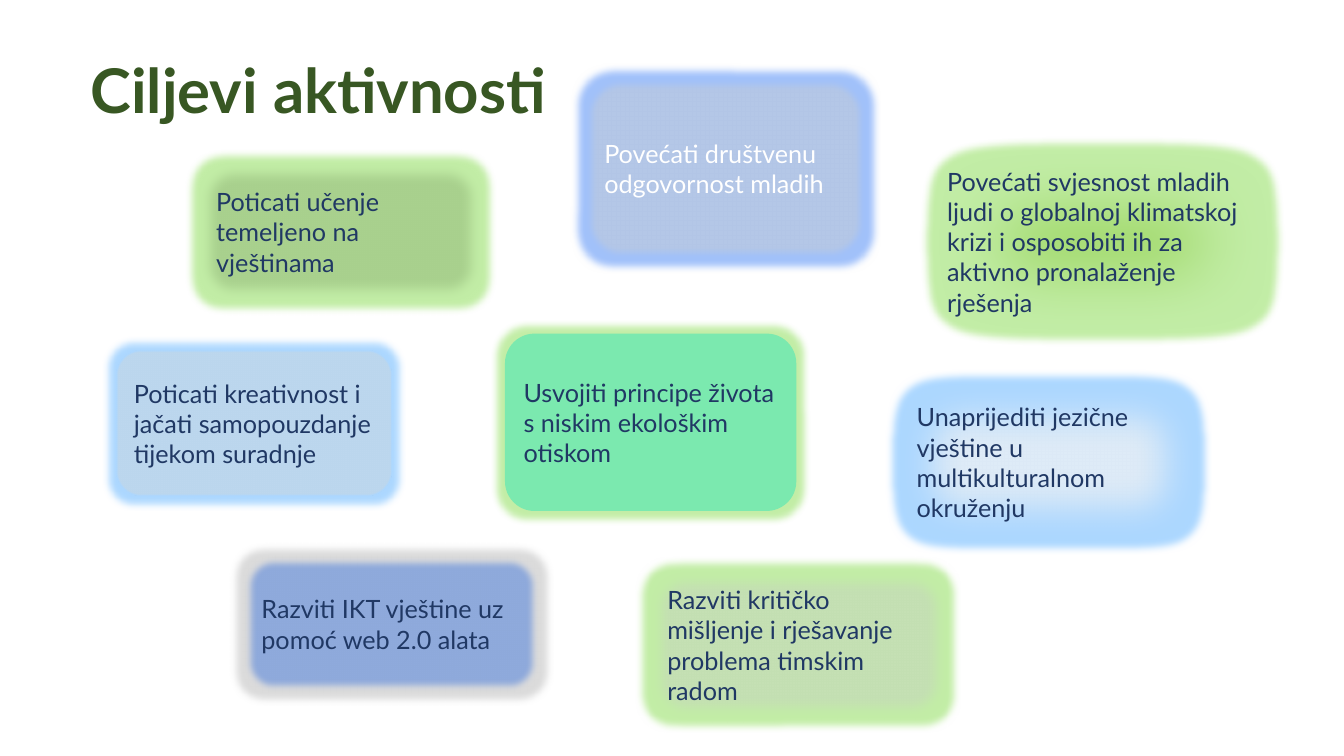
from lxml.etree import SubElement
from pptx import Presentation
from pptx.dml.color import RGBColor
from pptx.enum.shapes import MSO_SHAPE as Shape
from pptx.enum.text import MSO_ANCHOR as Anchor, MSO_AUTO_SIZE as AutoSize, PP_ALIGN as Align
from pptx.oxml.ns import qn
from pptx.util import Pt

NAVY = RGBColor(0x20, 0x38, 0x64)
WHITE = RGBColor(0xFF, 0xFF, 0xFF)
DARK_GREEN = RGBColor(0x38, 0x57, 0x23)
OUTLINE = RGBColor(0x43, 0x73, 0x9E)
MINT = RGBColor(0x7B, 0xE9, 0xAF)
PALE_GREEN = RGBColor(0xC5, 0xE0, 0xB4)
SOFT_GREEN = RGBColor(0xA9, 0xD1, 0x8E)
LIME = RGBColor(0x92, 0xD0, 0x50)
PERIWINKLE = RGBColor(0xB4, 0xC7, 0xE7)
SKY = RGBColor(0xBD, 0xD7, 0xEE)
STEEL_BLUE = RGBColor(0x8F, 0xAA, 0xDC)
ICE = RGBColor(0xDE, 0xEB, 0xF7)
GREEN_GLOW = RGBColor(0x68, 0xD3, 0x21)
SKY_GLOW = RGBColor(0x31, 0x9D, 0xFF)
BLUE_GLOW = RGBColor(0x14, 0x64, 0xF4)
GRAY_GLOW = RGBColor(0xA5, 0xA5, 0xA5)

# Text, (left, top, width, height), fill, text colour, outline, glow, soft edge radius
GOALS = [
    ("Usvojiti principe života s niskim ekološkim otiskom",
     (360.7, 238.3, 208.1, 126.7), MINT, NAVY, None, GREEN_GLOW, 0),
    ("Razviti kritičko mišljenje i rješavanje problema timskim radom",
     (464.4, 408.2, 212.4, 105.1), PALE_GREEN, NAVY, None, GREEN_GLOW, 8.86),
    ("Poticati učenje temeljeno na vještinama",
     (142.6, 116.6, 201.6, 97.9), SOFT_GREEN, NAVY, OUTLINE, GREEN_GLOW, 8.86),
    ("Povećati svjesnost mladih ljudi o globalnoj klimatskoj krizi i osposobiti ih "
     "za aktivno pronalaženje rješenja",
     (663.1, 106.6, 249.1, 131.8), LIME, NAVY, None, GREEN_GLOW, 50),
    ("Povećati društvenu odgovornost mladih",
     (418.3, 56.2, 200.2, 128.2), PERIWINKLE, WHITE, None, BLUE_GLOW, 5),
    ("Poticati kreativnost i jačati samopouzdanje tijekom suradnje",
     (83.5, 250.6, 195.8, 103.7), SKY, NAVY, None, SKY_GLOW, 1),
    ("Razviti IKT vještine uz pomoć web 2.0 alata",
     (175, 398.2, 209.5, 95), STEEL_BLUE, NAVY, OUTLINE, GRAY_GLOW, 5),
    ("Unaprijediti jezične vještine u multikulturalnom okruženju",
     (642.2, 273.6, 213.8, 113), ICE, NAVY, OUTLINE, SKY_GLOW, 25),
]


class GoalSlide:
    FONT = "Lato"
    GLOW_RADIUS = 11
    GLOW_ALPHA = "40000"

    def __init__(self, slide):
        self.slide = slide

    def add_text(self, shape, text, **font_format):
        shape.text_frame.word_wrap = True
        paragraph = shape.text_frame.paragraphs[0]
        paragraph.text = text
        paragraph.alignment = Align.LEFT
        font = paragraph.runs[0].font
        color = font_format.pop("color")
        for name, value in {"name": self.FONT, **font_format}.items():
            setattr(font, name, value)
        font.color.rgb = color

    def add_effects(self, shape, glow, soft_radius):
        """Surround the shape with a translucent glow and soften its edge."""
        shape.shadow.inherit = False
        effects = shape._element.spPr.find(qn("a:effectLst"))
        halo = SubElement(effects, qn("a:glow"), rad=str(Pt(self.GLOW_RADIUS)))
        color = SubElement(halo, qn("a:srgbClr"), val=str(glow))
        SubElement(color, qn("a:alpha"), val=self.GLOW_ALPHA)
        if soft_radius:
            SubElement(effects, qn("a:softEdge"), rad=str(Pt(soft_radius)))

    def add_title(self, text, box):
        shape = self.slide.shapes.add_textbox(*map(Pt, box))
        self.add_text(shape, text, size=Pt(44), bold=True, color=DARK_GREEN)
        shape.text_frame.auto_size = AutoSize.SHAPE_TO_FIT_TEXT

    def add_goal(self, text, box, fill, text_color, outline, glow, soft_radius):
        shape = self.slide.shapes.add_shape(Shape.ROUNDED_RECTANGLE, *map(Pt, box))
        shape.fill.solid()
        shape.fill.fore_color.rgb = fill
        if outline:
            shape.line.color.rgb = outline
            shape.line.width = Pt(1)
        else:
            shape.line.fill.background()
        self.add_effects(shape, glow, soft_radius)
        self.add_text(shape, text, size=Pt(18), color=text_color)
        shape.text_frame.vertical_anchor = Anchor.MIDDLE


def main():
    presentation = Presentation()
    presentation.slide_width, presentation.slide_height = Pt(960), Pt(540)
    goal_slide = GoalSlide(presentation.slides.add_slide(presentation.slide_layouts[6]))
    for goal in GOALS:
        goal_slide.add_goal(*goal)
    goal_slide.add_title("Ciljevi aktivnosti", (57.6, 33.8, 393.8, 60.5))
    presentation.save("out.pptx")


if __name__ == "__main__":
    main()
